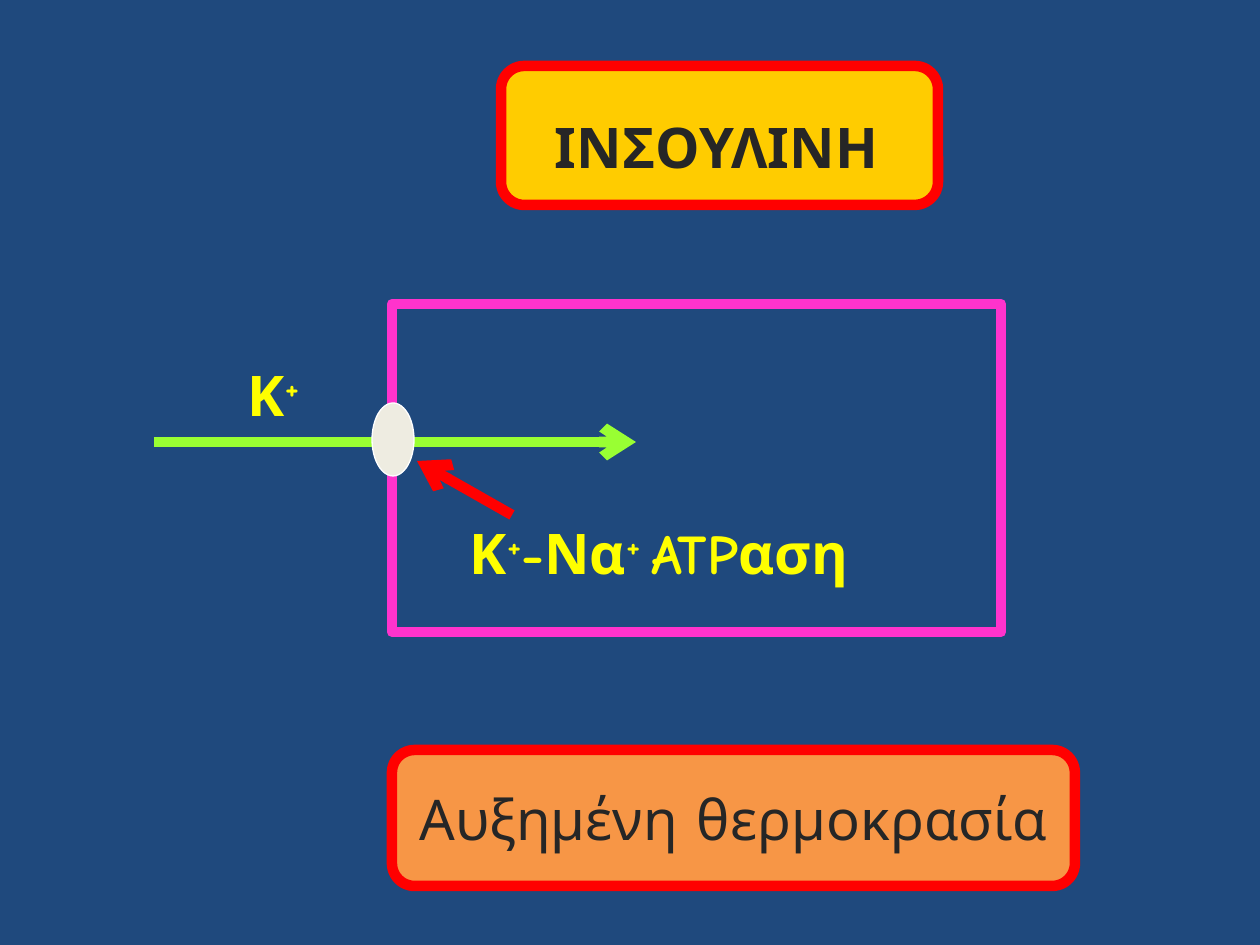
from lxml.etree import SubElement
from pptx import Presentation
from pptx.dml.color import RGBColor
from pptx.enum.shapes import MSO_CONNECTOR as Connector, MSO_SHAPE as Shape
from pptx.enum.text import MSO_ANCHOR as Anchor, MSO_AUTO_SIZE as AutoSize, PP_ALIGN as Align
from pptx.oxml.ns import qn
from pptx.util import Emu, Pt

PX = 914400 / 126
FONT = "Comic Neue"
COLORS = {
    "background": "1F497D", "gold": "FFCC00", "red": "FF0000", "pink": "FF33CC",
    "green": "99FF33", "yellow": "FFFF00", "ivory": "EEECE1", "white": "FFFFFF",
    "dark": "262626", "orange": "F79646",
}


def px(*values):
    return [Emu(round(value * PX)) for value in values]


def rgb(name):
    return RGBColor.from_string(COLORS[name])


def write(shape, *runs, color, bold=True, wrap=True, anchor=Anchor.TOP, fit=AutoSize.NONE):
    frame = shape.text_frame
    frame.word_wrap = wrap
    frame.auto_size = fit
    frame.vertical_anchor = anchor
    paragraph = frame.paragraphs[0]
    paragraph.alignment = Align.CENTER
    for text in runs:
        run = paragraph.add_run()
        run.text = text
        run.font.name = FONT
        run.font.size = Pt(32)
        run.font.bold = bold
        run.font.color.rgb = rgb(color)
        if text.strip() == "+":
            run.font._element.set("baseline", "30000")


def add_label(slide, box, *runs, color):
    label = slide.shapes.add_textbox(*px(*box))
    write(label, *runs, color=color, fit=AutoSize.SHAPE_TO_FIT_TEXT)


def add_figure(slide, kind, box, line, fill=None, width=6):
    shape = slide.shapes.add_shape(kind, *px(*box))
    shape.shadow.inherit = False
    shape.line.color.rgb = rgb(line)
    shape.line.width = Pt(width)
    if fill:
        shape.fill.solid()
        shape.fill.fore_color.rgb = rgb(fill)
    else:
        shape.fill.background()
    return shape


def add_arrow(slide, start, end, color, arrow_end):
    arrow = slide.shapes.add_connector(Connector.STRAIGHT, *px(*start, *end))
    arrow.line.color.rgb = rgb(color)
    arrow.line.width = Pt(6)
    properties = arrow._element.spPr
    SubElement(properties.find(qn("a:ln")), qn(f"a:{arrow_end}"), type="arrow")
    SubElement(properties, qn("a:effectLst"))


def add_insulin(slide, left, top):
    add_figure(slide, Shape.ROUNDED_RECTANGLE, (left, top, 437, 139), "red", "gold")
    add_label(slide, (left - 199, top + 40, 829, 79), "ΙΝΣΟΥΛΙΝΗ", color="dark")


def add_cell(slide, left, top):
    add_figure(slide, Shape.RECTANGLE, (left, top, 609, 328), "pink")
    add_arrow(slide, (left - 238, top + 138), (left + 244, top + 138), "green", "tailEnd")
    add_label(slide, (left - 218, top + 50, 199, 79), "Κ", "+", color="yellow")
    add_label(slide, (left + 10, top + 208, 514, 79),
              "Κ", "+", "-Να", "+ ", "ATPαση", color="yellow")
    add_figure(slide, Shape.OVAL, (left - 20, top + 99, 42, 73), "white", "ivory", 0.75)
    add_arrow(slide, (left + 25, top + 157), (left + 120, top + 211), "red", "headEnd")


def add_temperature(slide, left, top):
    box = add_figure(slide, Shape.ROUNDED_RECTANGLE, (left, top, 683, 136), "red", "orange")
    write(box, "Αυξημένη θερμοκρασία", color="dark", bold=False, wrap=False, anchor=Anchor.MIDDLE)


def main():
    presentation = Presentation()
    presentation.slide_width, presentation.slide_height = px(1260, 945)
    slide = presentation.slides.add_slide(presentation.slide_layouts[6])
    slide.background.fill.solid()
    slide.background.fill.fore_color.rgb = rgb("background")
    add_insulin(slide, 501, 66)
    add_cell(slide, 392, 304)
    add_temperature(slide, 392, 750)
    presentation.save("out.pptx")


if __name__ == "__main__":
    main()
